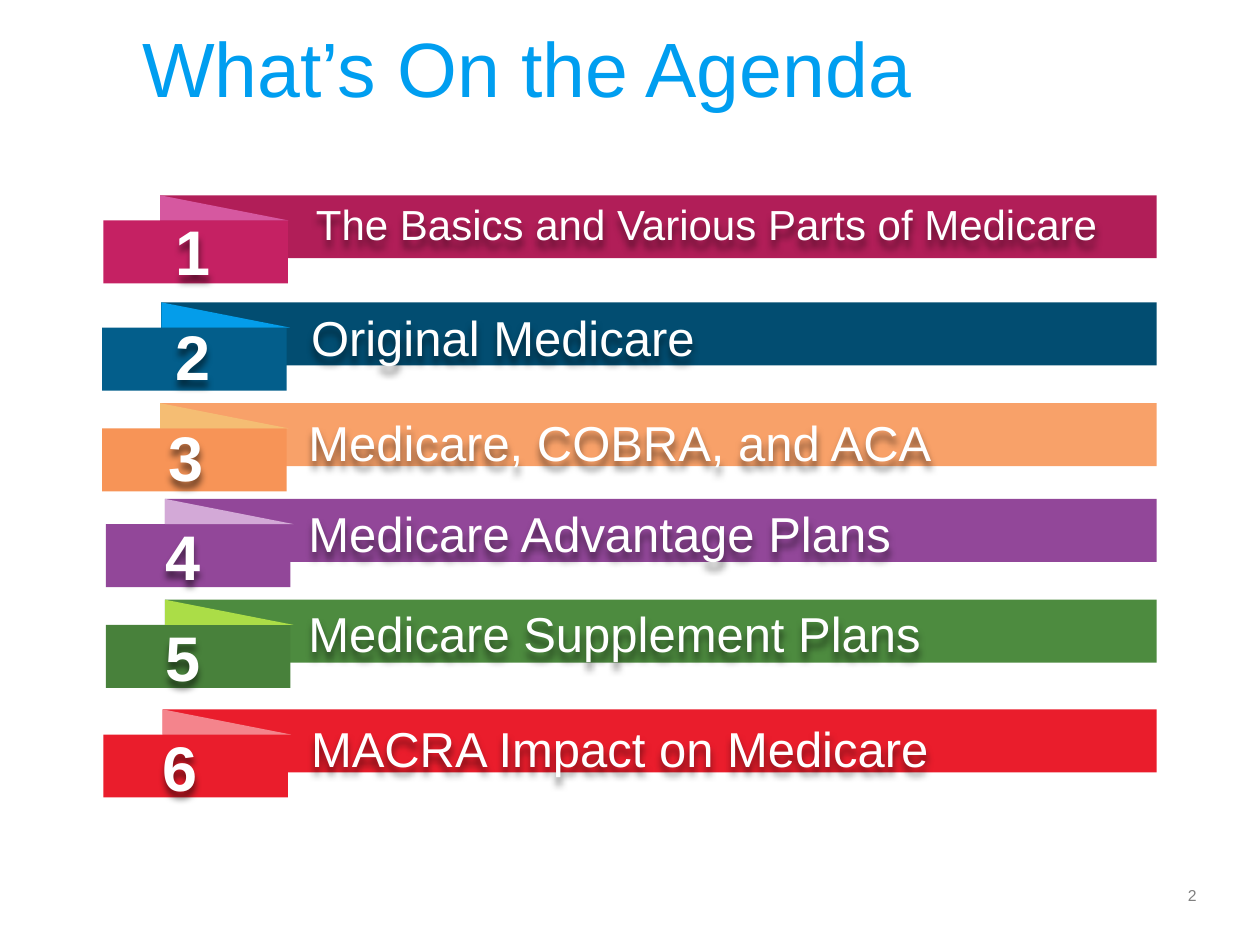
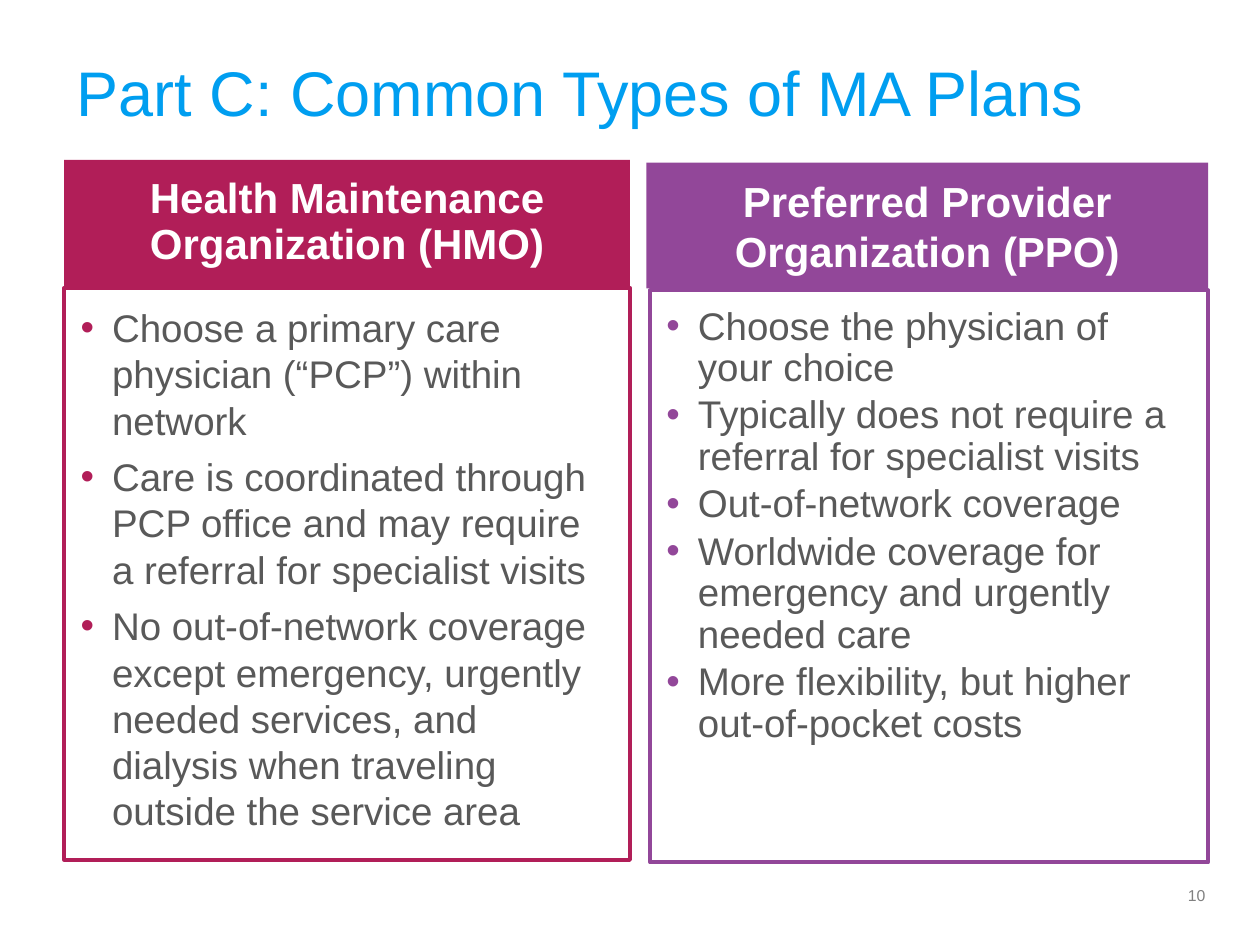
from lxml.etree import SubElement
from pptx import Presentation
from pptx.dml.color import RGBColor
from pptx.enum.shapes import MSO_SHAPE
from pptx.enum.text import MSO_ANCHOR, MSO_AUTO_SIZE, PP_ALIGN
from pptx.oxml.ns import qn
from pptx.util import Inches, Pt

COLS, ROWS = 100, 75
WHITE, SKY, GREY, SLATE = "FFFFFF", "009EF0", "808080", "595959"
BERRY, PLUM = "B11E58", "924799"
PAD = (0.1, 0.05, 0.1, 0.05)


def color(code):
    return RGBColor.from_string(code)


class Deck:
    font = "Arial"

    def __init__(self):
        self.show = Presentation()
        self.show.slide_width = Inches(10)
        self.show.slide_height = Inches(7.5)
        self.slide = None

    def place(self, left, top, width, height):
        col = self.show.slide_width / COLS
        row = self.show.slide_height / ROWS
        return [round(n) for n in (left * col, top * row, width * col, height * row)]

    def start(self, title, box, size, page):
        self.slide = self.show.slides.add_slide(self.show.slide_layouts[5])
        head = self.slide.shapes.title
        head.left, head.top, head.width, head.height = self.place(*box)
        self.letter(head, [title], size, SKY, anchor=MSO_ANCHOR.MIDDLE)
        self.text((93.3, 70, 4.2, 2.4), page, 9, GREY, line=0.9)

    def letter(self, shape, lines, size, ink, bold=False, align=PP_ALIGN.LEFT,
               anchor=MSO_ANCHOR.TOP, pad=PAD, line=None, after=0, dot=None):
        frame = shape.text_frame
        frame.word_wrap = True
        frame.auto_size = MSO_AUTO_SIZE.NONE
        frame.vertical_anchor = anchor
        (frame.margin_left, frame.margin_top,
         frame.margin_right, frame.margin_bottom) = map(Inches, pad)
        for spot, words in enumerate(lines):
            para = frame.add_paragraph() if spot else frame.paragraphs[0]
            if dot:
                self.bullet(para, dot)
            para.alignment = align
            para.space_before = Pt(0)
            para.space_after = Pt(after)
            if line:
                para.line_spacing = line
            run = para.add_run()
            run.text = words
            run.font.name = self.font
            run.font.size = Pt(size)
            run.font.bold = bold
            run.font.color.rgb = color(ink)

    def bullet(self, para, code):
        props = para._p.get_or_add_pPr()
        props.set("marL", str(Inches(0.25)))
        props.set("indent", str(-Inches(0.25)))
        tint = SubElement(props, qn("a:buClr"))
        SubElement(tint, qn("a:srgbClr"), val=code)
        SubElement(props, qn("a:buFont"), typeface=self.font)
        SubElement(props, qn("a:buChar"), char="•")

    def text(self, box, words, size, ink, shade=False, **style):
        shape = self.slide.shapes.add_textbox(*self.place(*box))
        self.letter(shape, [words], size, ink, **style)
        if shade:
            self.shade(shape)

    def shade(self, shape):
        group = SubElement(shape._element.spPr, qn("a:effectLst"))
        cast = SubElement(group, qn("a:outerShdw"), blurRad=str(Pt(4)),
                          dist=str(Pt(4)), dir="5400000", algn="t", rotWithShape="0")
        tint = SubElement(cast, qn("a:srgbClr"), val="000000")
        SubElement(tint, qn("a:alpha"), val="50000")

    def block(self, box, fill, edge=None, kind=MSO_SHAPE.RECTANGLE):
        shape = self.slide.shapes.add_shape(kind, *self.place(*box))
        shape.shadow.inherit = False
        shape.fill.solid()
        shape.fill.fore_color.rgb = color(fill)
        if edge:
            shape.line.color.rgb = color(edge)
            shape.line.width = Pt(2.25)
        else:
            shape.line.fill.background()
        return shape

    def ribbon(self, mark, top, bar, tag, mid, drop, left, lift, words, size, tints):
        base, front, fold = tints
        self.block((bar, top, 91.8 - bar, 5), base)
        self.block((tag, top + 2, 14.65, 5), front)
        self.block((bar, top, 10.2, 2), fold, kind=MSO_SHAPE.RIGHT_TRIANGLE)
        self.text((mid - 3.2, top + drop, 6.4, 7.1), mark, 36, WHITE, shade=True,
                  bold=True, align=PP_ALIGN.CENTER)
        self.text((left, top - lift, 91.8 - left, 6.1), words, size, WHITE,
                  shade=True, line=1.2, after=12)

    def panel(self, left, top, width, inset, tint, title, lines, head, body):
        cap = self.block((left, top, width, 10), tint)
        self.letter(cap, [title], 24, WHITE, bold=True, align=PP_ALIGN.CENTER,
                    anchor=MSO_ANCHOR.MIDDLE, pad=(0.19, 0.11, 0.19, 0.11), **head)
        card = self.block((left + inset, top + 10.15, width - inset, 45.4), WHITE, tint)
        self.letter(card, lines, 22, SLATE, pad=(0.13, 0.13, 0.17, 0.19),
                    dot=tint, **body)


AGENDA = [
    (15.5, 12.7, 8.2, 15.35, 0.9, 24.1, 1, "The Basics and Various Parts of Medicare", 24,
     (BERRY, "C52163", "D658A0")),
    (24, 12.8, 8.1, 15.3, 0.7, 23.7, 1, "Original Medicare", 28,
     ("024D71", "035E8B", "049DEA")),
    (32, 12.7, 8.1, 14.75, 0.7, 23.5, 0.7, "Medicare, COBRA, and ACA", 28,
     ("F8A169", "F79457", "F5BD73")),
    (39.6, 13.1, 8.4, 14.5, 1, 23.5, 1.1, "Medicare Advantage Plans", 28,
     (PLUM, PLUM, "D3A9D7")),
    (47.6, 13.1, 8.4, 14.5, 1, 23.5, 1.1, "Medicare Supplement Plans", 28,
     ("4D8B3F", "48813B", "ABDD47")),
    (56.3, 12.9, 8.2, 14.3, 1, 23.7, 0.7, "MACRA Impact on Medicare", 28,
     ("EA1D2C", "EA1D2C", "F4848C")),
]

HMO = [
    "Choose a primary care physician (“PCP”) within network",
    "Care is coordinated through PCP office and may require a referral for specialist visits",
    "No out-of-network coverage except emergency, urgently needed services, "
    "and dialysis when traveling outside the service area",
]

PPO = [
    "Choose the physician of your choice",
    "Typically does not require a referral for specialist visits",
    "Out-of-network coverage",
    "Worldwide coverage for emergency and urgently needed care",
    "More flexibility, but higher out-of-pocket costs",
]


def main():
    deck = Deck()
    deck.start("What’s On the Agenda", (10.3, 1.1, 79.3, 8.4), 44, "2")
    for mark, item in enumerate(AGENDA, 1):
        deck.ribbon(str(mark), *item)

    deck.start("Part C: Common Types of MA Plans", (5.1, 3.5, 92.4, 7.5), 36, "10")
    deck.panel(5.1, 12.7, 44.9, 0, BERRY, "Health Maintenance Organization (HMO)", HMO,
               {"line": 0.9, "after": 8.4}, {"after": 6})
    deck.panel(51.3, 12.9, 44.6, 0.3, PLUM, "Preferred Provider Organization (PPO)", PPO,
               {"after": 6}, {"line": 0.9, "after": 3.3})
    deck.show.save("out.pptx")


if __name__ == "__main__":
    main()
